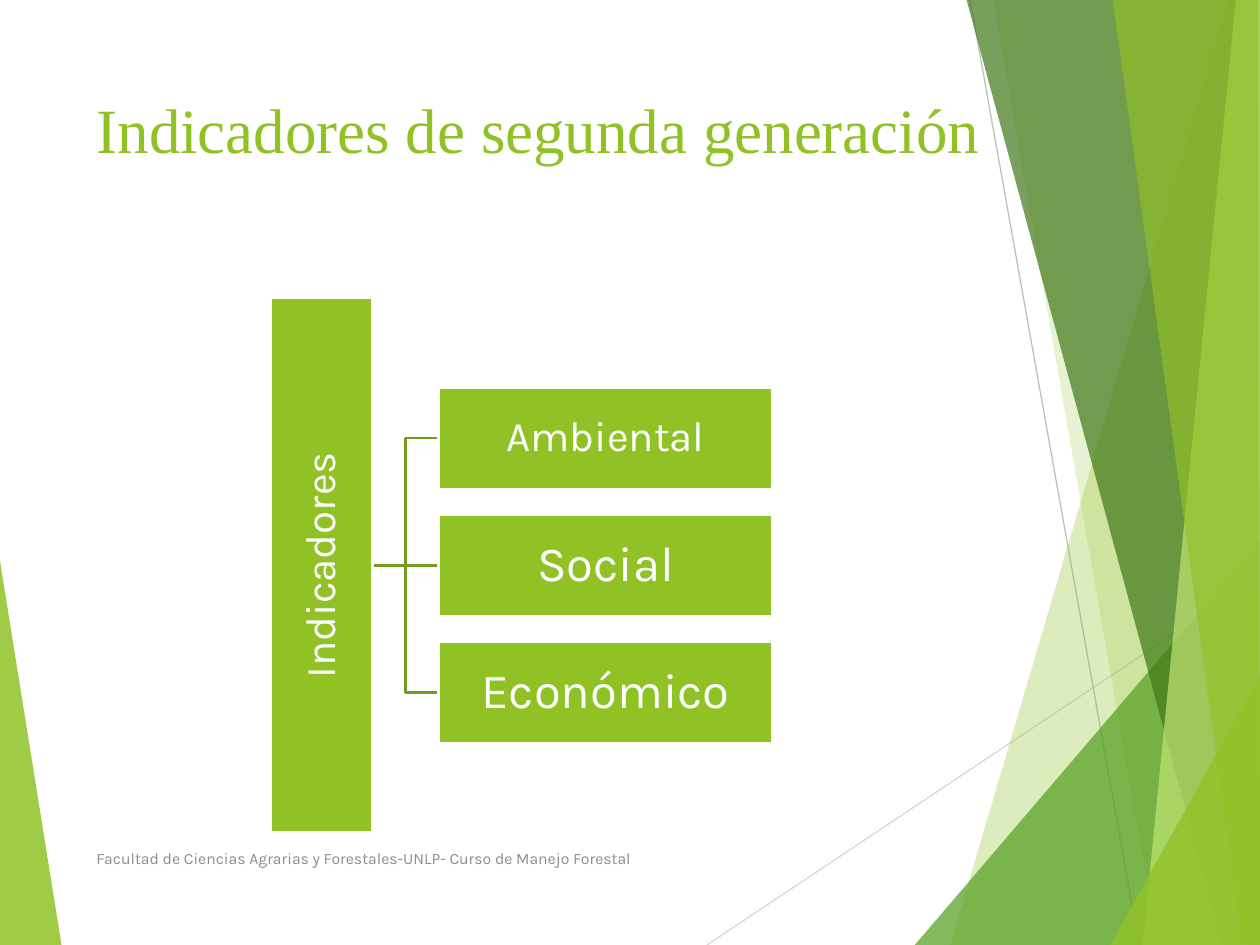
import pptx
import pptx.util
from pptx.dml.color import RGBColor
from pptx.enum.shapes import MSO_CONNECTOR, MSO_SHAPE
from pptx.enum.text import MSO_ANCHOR, MSO_AUTO_SIZE, PP_ALIGN
from pptx.oxml.ns import qn
from pptx.oxml.xmlchemy import OxmlElement

Pt = pptx.util.Pt

COLORS = {
    "lime": "90C226", "green": "54A021", "forest": "3F7819", "pale": "C0E474",
    "branch": "739B1E", "white": "FFFFFF", "footer": "8C8C8C",
    "ray": "D9D9D9", "ray_dark": "BFBFBF",
}


class SlideBuilder:
    body_font = "Karla"
    title_font = "Times New Roman"

    def __init__(self, slide):
        self.slide = slide

    def color(self, name):
        return RGBColor.from_string(COLORS[name])

    def add_text(self, frame, text, size, color, align=PP_ALIGN.LEFT, font=None):
        paragraph = frame.paragraphs[0]
        paragraph.alignment = align
        run = paragraph.add_run()
        run.text = text
        run.font.name = font or self.body_font
        run.font.size = Pt(size)
        run.font.color.rgb = self.color(color)
        return paragraph

    def title(self, text, left, top, width, height):
        title = self.slide.shapes.title
        title.left, title.top = Pt(left), Pt(top)
        title.width, title.height = Pt(width), Pt(height)
        frame = title.text_frame
        frame.auto_size = MSO_AUTO_SIZE.NONE
        frame.vertical_anchor = MSO_ANCHOR.TOP
        self.add_text(frame, text, 36, "lime", font=self.title_font)

    def footer(self, text, left, top, width, height):
        box = self.slide.shapes.add_textbox(Pt(left), Pt(top), Pt(width), Pt(height))
        box.text_frame.word_wrap = True
        box.text_frame.vertical_anchor = MSO_ANCHOR.MIDDLE
        self.add_text(box.text_frame, text, 9, "footer")

    def facet(self, points, color, opacity):
        corners = [(Pt(x), Pt(y)) for x, y in points]
        outline = self.slide.shapes.build_freeform(*corners[0])
        outline.add_line_segments(corners[1:], close=True)
        facet = outline.convert_to_shape()
        facet.shadow.inherit = False
        facet.fill.solid()
        facet.fill.fore_color.rgb = self.color(color)
        facet.line.fill.background()
        alpha = OxmlElement("a:alpha")
        alpha.set("val", str(opacity * 1000))
        facet.element.spPr.find(".//" + qn("a:srgbClr")).append(alpha)

    def connector(self, start, end, color, weight, kind=MSO_CONNECTOR.STRAIGHT):
        line = self.slide.shapes.add_connector(
            kind, Pt(start[0]), Pt(start[1]), Pt(end[0]), Pt(end[1]))
        line.line.color.rgb = self.color(color)
        line.line.width = Pt(weight)
        line.element.spPr.append(OxmlElement("a:effectLst"))
        return line

    def box(self, text, center, width, height, size, rotation=0):
        box = self.slide.shapes.add_shape(
            MSO_SHAPE.RECTANGLE, Pt(center[0] - width / 2),
            Pt(center[1] - height / 2), Pt(width), Pt(height))
        box.rotation = rotation
        box.shadow.inherit = False
        box.fill.solid()
        box.fill.fore_color.rgb = self.color("lime")
        box.line.color.rgb = self.color("white")
        box.line.width = Pt(1.5)
        frame = box.text_frame
        frame.word_wrap = True
        frame.vertical_anchor = MSO_ANCHOR.MIDDLE
        frame.margin_left = frame.margin_right = Pt(1.5)
        frame.margin_top = frame.margin_bottom = Pt(1.5)
        label = self.add_text(frame, text, size, "white", PP_ALIGN.CENTER)
        label.line_spacing = 0.9
        return box


def main():
    deck = pptx.Presentation()
    deck.slide_width, deck.slide_height = Pt(720), Pt(540)
    builder = SlideBuilder(deck.slides.add_slide(deck.slide_layouts[5]))

    # Faceted background, back to front
    top, bottom, right = -0.7, 540, 720.7
    builder.facet([(-0.7, 316), (35.3, 540.7), (-0.7, bottom)], "lime", 85)
    builder.connector((404, bottom), (right, 329), "ray", 0.75)
    builder.connector((554.4, 0), (651, bottom), "ray_dark", 0.75)
    corner = [(right, bottom), (right, top)]
    for edge, color, opacity in [
        ([(702, 0), (543, bottom), *corner], "lime", 30),
        ([(567.4, top), (661.7, bottom), *corner], "lime", 20),
        ([(522.7, bottom), (right, 308.5), (right, bottom)], "green", 72),
        ([(552.2, top), (698.4, bottom), *corner], "forest", 70),
        ([(706.3, top), (653, bottom), *corner], "pale", 70),
        ([(635.8, top), (709.9, bottom), (720, bottom), (718.6, top)], "lime", 65),
        ([(634.3, bottom), (right, 385.2), (right, bottom)], "lime", 80),
    ]:
        builder.facet(edge, color, opacity)

    builder.title("Indicadores de segunda generación", 48, 48, 578, 104)

    # Indicator tree: branches lie behind the boxes
    middle, pitch, thickness = 323, 72.6, 58.1
    root_x, branch_x, branch_width = 183.7, 250.6, 190.8
    root_edge = (root_x + thickness / 2, middle)
    indicators = [("Ambiental", 24), ("Social", 28), ("Económico", 28)]
    rows = [middle + (i - 1) * pitch for i in range(len(indicators))]
    branches = [
        builder.connector(
            root_edge, (branch_x, y), "branch", 1.5,
            MSO_CONNECTOR.STRAIGHT if y == middle else MSO_CONNECTOR.ELBOW)
        for y in rows
    ]
    root = builder.box("Indicadores", (root_x, middle), 305.5, thickness, 24, 270)
    for (name, size), y, branch in zip(indicators, rows, branches):
        indicator = builder.box(
            name, (branch_x + branch_width / 2, y), branch_width, thickness, size)
        branch.begin_connect(root, 2)
        branch.end_connect(indicator, 1)
        # The bottom of the turned root faces right
        branch.begin_x, branch.begin_y = Pt(root_edge[0]), Pt(root_edge[1])

    builder.footer(
        "Facultad de Ciencias Agrarias y Forestales-UNLP- Curso de Manejo Forestal",
        48, 476, 364.5, 28.8)

    deck.save("out.pptx")


if __name__ == "__main__":
    main()
